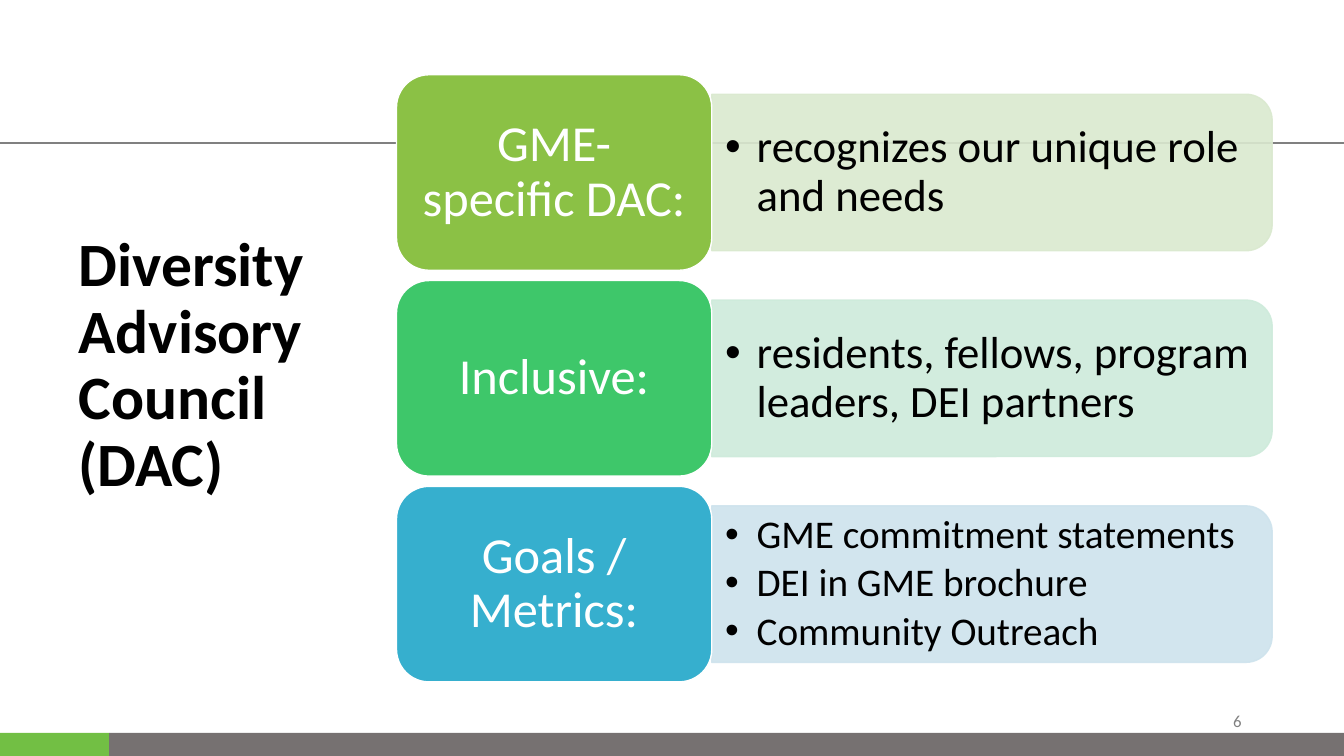
"""Build the Diversity Advisory Council slide."""
import pptx
import pptx.util
import pptx.dml.color
import pptx.enum.shapes
import pptx.enum.text
import pptx.oxml.ns
import lxml.etree

Pt = pptx.util.Pt
RGBColor = pptx.dml.color.RGBColor
Shape = pptx.enum.shapes.MSO_SHAPE
Align = pptx.enum.text.PP_ALIGN
qn = pptx.oxml.ns.qn

BLACK = RGBColor(0x00, 0x00, 0x00)
WHITE = RGBColor(0xFF, 0xFF, 0xFF)
GRAY = RGBColor(0x80, 0x80, 0x80)
FOOTER_GREEN = RGBColor(0x72, 0xBF, 0x44)
FOOTER_GRAY = RGBColor(0x76, 0x71, 0x71)
LIME = RGBColor(0x8B, 0xC1, 0x45)
PALE_LIME = RGBColor(0xDA, 0xE9, 0xCF)
GREEN = RGBColor(0x3E, 0xC7, 0x6A)
PALE_GREEN = RGBColor(0xCE, 0xEB, 0xDB)
BLUE = RGBColor(0x36, 0xAF, 0xCE)
PALE_BLUE = RGBColor(0xCE, 0xE3, 0xED)

SLIDE_WIDTH, SLIDE_HEIGHT = 960, 540
FOOTER_TOP, FOOTER_SPLIT = 523.5, 78
LABEL_LEFT, LABEL_WIDTH, LABEL_HEIGHT = 283.2, 225.2, 139.7
PANEL_WIDTH, PANEL_HEIGHT = 400.3, 111.8
LIST_WIDTH, LIST_HEIGHT = 395.2, 100.8
FIRST_ROW_TOP, ROW_PITCH = 53.4, 147

ROWS = [
    ("GME-specific DAC:", LIME, PALE_LIME, 32,
     ["recognizes our unique role and needs"]),
    ("Inclusive:", GREEN, PALE_GREEN, 32,
     ["residents, fellows, program leaders, DEI partners"]),
    ("Goals / Metrics:", BLUE, PALE_BLUE, 28,
     ["GME commitment statements", "DEI in GME brochure", "Community Outreach"]),
]


class SlideBuilder:
    font_name = "Calibri"

    def __init__(self, slide):
        self.slide = slide
        self.shapes = slide.shapes

    def place(self, item, left, top, width, height):
        item.left, item.top = Pt(left), Pt(top)
        item.width, item.height = Pt(width), Pt(height)

    def fill_text(self, item, lines, size, color, align=Align.LEFT, bold=False,
                  spacing=0.9, insets=(7.2, 3.6), bulleted=False):
        frame = item.text_frame
        frame.text = "\n".join(lines)
        frame.word_wrap = True
        frame.auto_size = pptx.enum.text.MSO_AUTO_SIZE.NONE
        frame.vertical_anchor = pptx.enum.text.MSO_ANCHOR.MIDDLE
        frame.margin_left = frame.margin_right = Pt(insets[0])
        frame.margin_top = frame.margin_bottom = Pt(insets[1])
        for paragraph in frame.paragraphs:
            paragraph.alignment = align
            paragraph.line_spacing = spacing
            paragraph.space_before = Pt(0)
            if bulleted:
                paragraph.space_after = Pt(size * 0.15)
                self.add_bullet(paragraph)
            paragraph.font.name = self.font_name
            paragraph.font.size = Pt(size)
            paragraph.font.bold = bold
            paragraph.font.color.rgb = color

    def add_bullet(self, paragraph):
        properties = paragraph._p.get_or_add_pPr()
        properties.set("marL", str(Pt(22.5)))
        properties.set("indent", str(Pt(-22.5)))
        lxml.etree.SubElement(properties, qn("a:buFont")).set("typeface", "Arial")
        lxml.etree.SubElement(properties, qn("a:buChar")).set("char", "•")

    def title(self, text, left, top, width, height):
        heading = self.shapes.title
        self.place(heading, left, top, width, height)
        self.fill_text(heading, [text], 44, BLACK, bold=True)

    def block(self, kind, left, top, width, height, fill, outline=None):
        block = self.shapes.add_shape(kind, Pt(left), Pt(top), Pt(width), Pt(height))
        block.shadow.inherit = False
        block.fill.solid()
        block.fill.fore_color.rgb = fill
        if outline is None:
            block.line.fill.background()
        else:
            block.line.color.rgb = outline
            block.line.width = Pt(1)
        return block

    def rule(self, top):
        rule = self.shapes.add_connector(
            pptx.enum.shapes.MSO_CONNECTOR.STRAIGHT,
            Pt(0), Pt(top), Pt(SLIDE_WIDTH), Pt(top))
        rule.line.color.rgb = GRAY
        rule.line.width = Pt(1.5)
        lxml.etree.SubElement(rule._element.spPr, qn("a:effectLst"))

    def panel(self, left, middle, color):
        panel = self.block(
            Shape.ROUND_2_SAME_RECTANGLE,
            left + (PANEL_WIDTH - PANEL_HEIGHT) / 2, middle - PANEL_WIDTH / 2,
            PANEL_HEIGHT, PANEL_WIDTH, color, color)
        panel.rotation = 90
        for tint in panel._element.spPr.iter(qn("a:srgbClr")):
            lxml.etree.SubElement(tint, qn("a:alpha")).set("val", "90000")
        return panel

    def row(self, top, points, label_text, color, tint, size, lines):
        middle = top + LABEL_HEIGHT / 2
        list_left = LABEL_LEFT + LABEL_WIDTH
        panel = self.panel(list_left, middle, tint)
        panel._element.addnext(points._element)
        self.place(points, list_left, middle - LIST_HEIGHT / 2, LIST_WIDTH, LIST_HEIGHT)
        self.fill_text(points, lines, size, BLACK, insets=(9.6, 4.8), bulleted=True)
        label = self.block(Shape.ROUNDED_RECTANGLE, LABEL_LEFT, top,
                           LABEL_WIDTH, LABEL_HEIGHT, color, WHITE)
        self.fill_text(label, [label_text], 36, WHITE, Align.CENTER, insets=(10.8, 5.4))

    def page_number(self, text, left, top, width, height):
        number = self.shapes.add_textbox(Pt(left), Pt(top), Pt(width), Pt(height))
        self.fill_text(number, [text], 12, GRAY, Align.RIGHT, spacing=1.0)


def main():
    deck = pptx.Presentation()
    deck.slide_width, deck.slide_height = Pt(SLIDE_WIDTH), Pt(SLIDE_HEIGHT)
    slide = deck.slides.add_slide(deck.slide_layouts.get_by_name("Comparison"))
    builder = SlideBuilder(slide)
    footer_height = SLIDE_HEIGHT - FOOTER_TOP
    builder.block(Shape.RECTANGLE, 0, FOOTER_TOP, FOOTER_SPLIT, footer_height, FOOTER_GREEN)
    builder.block(Shape.RECTANGLE, FOOTER_SPLIT, FOOTER_TOP,
                  SLIDE_WIDTH - FOOTER_SPLIT, footer_height, FOOTER_GRAY)
    builder.rule(102)
    builder.title("Diversity Advisory Council (DAC)", 49, 91.4, 185, 340.6)
    *point_lists, spare = list(slide.placeholders)[1:]
    spare._element.getparent().remove(spare._element)
    for index, (points, row) in enumerate(zip(point_lists, ROWS)):
        builder.row(FIRST_ROW_TOP + index * ROW_PITCH, points, *row)
    builder.page_number("6", 678, 500.5, 216, 28.8)
    deck.save("out.pptx")


if __name__ == "__main__":
    main()
